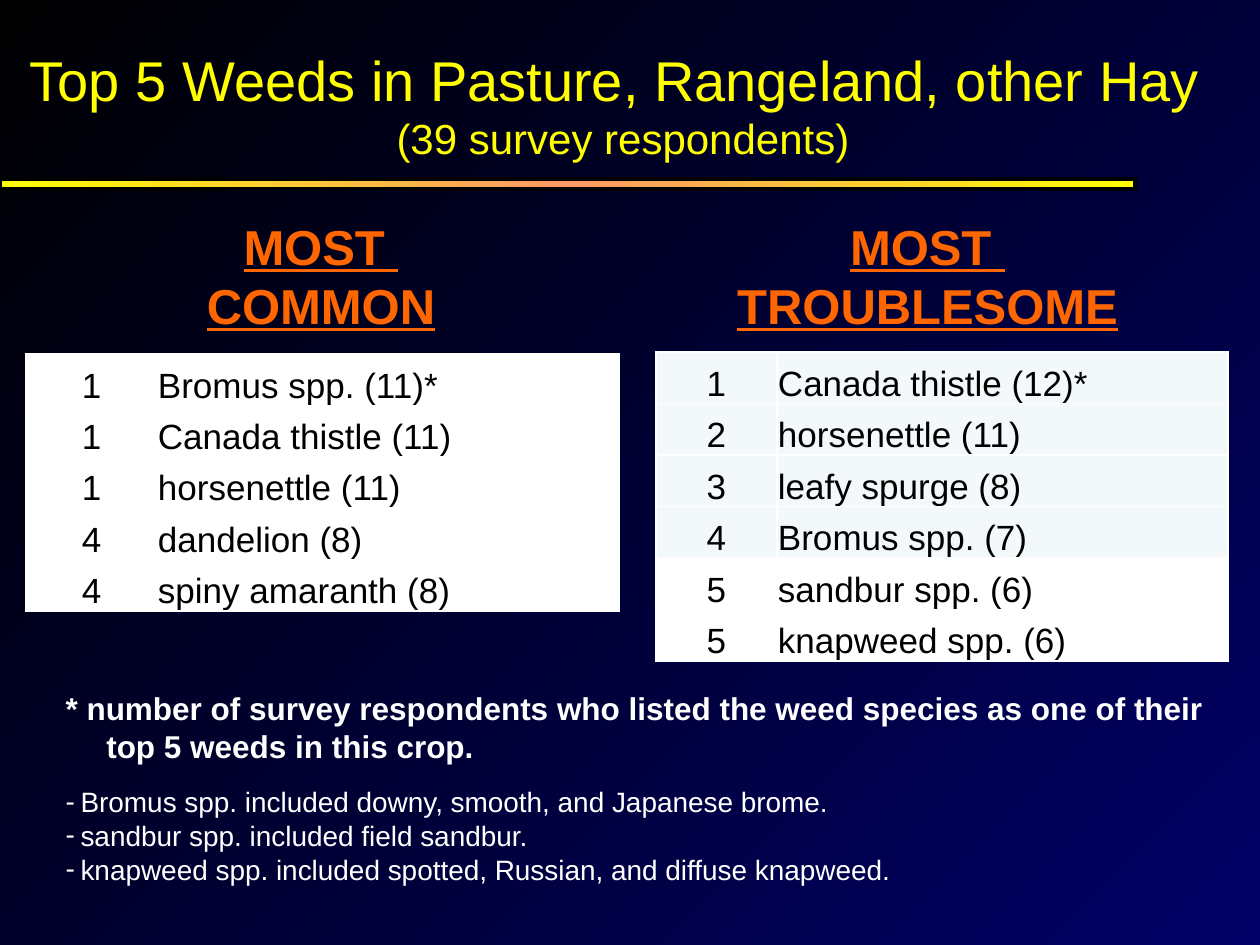
from copy import deepcopy
from pptx import Presentation
from pptx.dml.color import RGBColor
from pptx.enum.shapes import MSO_SHAPE as Shape
from pptx.enum.text import MSO_ANCHOR as Anchor, MSO_AUTO_SIZE as AutoSize, PP_ALIGN as Align
from pptx.oxml.ns import qn
from pptx.oxml.xmlchemy import OxmlElement
from pptx.util import Emu, Pt

SCALE = 914400 / 126
COLORS = {
    "title": "FFFF00", "heading": "FF6600", "glow": "FF9966", "night": "000066",
    "black": "000000", "white": "FFFFFF", "tint": "F3F9FA",
}
TITLE = [("Top 5 Weeds in Pasture, Rangeland, other Hay ", 32), ("(39 survey respondents)", 24)]
HEADINGS = [
    (("MOST ", "COMMON"), (170, 210, 302, 131), True),
    (("MOST ", "TROUBLESOME"), (722, 210, 411, 131), False),
]
COMMON = [
    ("1", "Bromus spp. (11)*"), ("1", "Canada thistle (11)"), ("1", "horsenettle (11)"),
    ("4", "dandelion (8)"), ("4", "spiny amaranth (8)"),
]
TROUBLESOME = [
    ("1", "Canada thistle (12)*"), ("2", "horsenettle (11)"), ("3", "leafy spurge (8)"),
    ("4", "Bromus spp. (7)"), ("5", "sandbur spp. (6)"), ("5", "knapweed spp. (6)"),
]
FOOTNOTE = "* number of survey respondents who listed the weed species as one of their  top 5 weeds in this crop."
SPECIES_NOTES = [
    "Bromus spp. included downy, smooth, and Japanese brome.",
    "sandbur spp. included field sandbur.",
    "knapweed spp. included spotted, Russian, and diffuse knapweed.",
]


def px(length):
    """Turn pixels into EMU."""
    return Emu(round(length * SCALE))


def rgb(name):
    """Look up a named colour."""
    return RGBColor.from_string(COLORS[name])


def apply(target, formats):
    """Set every attribute in a dict of format values."""
    for attribute, value in formats.items():
        setattr(target, attribute, value)


def place(holder, box):
    """Move a placeholder to a pixel box."""
    apply(holder, dict(zip(("left", "top", "width", "height"), map(px, box))))


def write(paragraph, text, size, color, align=Align.LEFT, **font_formats):
    """Fill a paragraph with one formatted run."""
    apply(paragraph, {"alignment": align, "space_before": Pt(0)})
    run = paragraph.add_run()
    run.text = text
    apply(run.font, {"name": "Arial", "size": Pt(size), **font_formats})
    run.font.color.rgb = rgb(color)


def paragraphs(frame, count):
    """Return the given number of paragraphs in an empty text frame."""
    return [frame.paragraphs[0]] + [frame.add_paragraph() for _ in range(count - 1)]


def paint_gradient(fill, owner, names, angle):
    """Spread the named colours evenly over a gradient."""
    fill.gradient()
    fill.gradient_angle = angle
    stop_list = next(owner.iter(qn("a:gsLst")))
    for _ in names[2:]:
        stop_list.append(deepcopy(stop_list[-1]))
    for index, (stop, name) in enumerate(zip(fill.gradient_stops, names)):
        stop.position = index / (len(names) - 1)
        stop.color.rgb = rgb(name)


def add_title(slide):
    """Write the two centred title lines."""
    title = slide.shapes.title
    place(title, (14, 10, 1218, 189))
    frame = title.text_frame
    apply(frame, {"vertical_anchor": Anchor.MIDDLE, "auto_size": AutoSize.NONE, "word_wrap": True})
    for paragraph, (text, size) in zip(paragraphs(frame, len(TITLE)), TITLE):
        write(paragraph, text, size, "title", Align.CENTER)


def add_rule(slide):
    """Draw the glowing bar below the title."""
    rule = slide.shapes.add_shape(Shape.RECTANGLE, *map(px, (0, 179, 1135, 10)))
    rule.shadow.inherit = False
    paint_gradient(rule.fill, rule._element, ("title", "glow", "title"), 0)
    rule.line.color.rgb = rgb("black")
    rule.line.width = Pt(2.25)


def add_heading(slide, lines, box, wraps):
    """Add an underlined column heading."""
    frame = slide.shapes.add_textbox(*map(px, box)).text_frame
    frame.word_wrap = wraps
    for paragraph, text in zip(paragraphs(frame, len(lines)), lines):
        write(paragraph, text, 28, "heading", Align.CENTER, bold=True, underline=True)


def add_borders(cell):
    """Give a cell thin white borders."""
    properties = cell._tc.get_or_add_tcPr()
    for side in ("a:lnL", "a:lnR", "a:lnT", "a:lnB"):
        border = OxmlElement(side)
        border.set("w", str(Pt(1)))
        solid, color = OxmlElement("a:solidFill"), OxmlElement("a:srgbClr")
        color.set("val", COLORS["white"])
        solid.append(color)
        border.append(solid)
        properties.append(border)


def add_ranking(slide, weeds, box, rank_width, tinted_rows=0):
    """Add a table of ranks and weeds."""
    table = slide.shapes.add_table(len(weeds), 2, *map(px, box)).table
    apply(table, {"first_row": False, "horz_banding": False})
    for column, width in zip(table.columns, (rank_width, box[2] - rank_width)):
        column.width = px(width)
    margins = {"margin_left": px(1), "margin_right": px(1), "margin_top": px(1), "margin_bottom": 0}
    for row, weed in enumerate(weeds):
        for column, (text, align) in enumerate(zip(weed, (Align.CENTER, Align.LEFT))):
            cell = table.cell(row, column)
            apply(cell, {"vertical_anchor": Anchor.BOTTOM, **margins})
            add_borders(cell)
            cell.fill.solid()
            cell.fill.fore_color.rgb = rgb("tint" if row < tinted_rows else "white")
            write(cell.text_frame.paragraphs[0], text, 20, "black", align)


def hang(paragraph, indent, bullet=None):
    """Give a paragraph a hanging indent and an optional bullet."""
    properties = paragraph._p.get_or_add_pPr()
    properties.set("marL", str(px(indent)))
    properties.set("indent", str(-px(indent)))
    mark = OxmlElement("a:buChar" if bullet else "a:buNone")
    if bullet:
        mark.set("char", bullet)
    properties.append(mark)


def add_notes(slide):
    """Write the footnote and the species list."""
    body = slide.placeholders[1]
    place(body, (53, 683, 1165, 212))
    frame = body.text_frame
    apply(frame, {"auto_size": AutoSize.NONE, "word_wrap": True, "vertical_anchor": Anchor.TOP})
    footnote, *species = paragraphs(frame, 1 + len(SPECIES_NOTES))
    write(footnote, FOOTNOTE, 18, "white", bold=True)
    footnote.space_after = Pt(11.5)
    hang(footnote, 32)
    for paragraph, text in zip(species, SPECIES_NOTES):
        write(paragraph, text, 16, "white")
        hang(paragraph, 15, "-")


def main():
    """Build and save the weed survey slide."""
    deck = Presentation()
    apply(deck, {"slide_width": px(1260), "slide_height": px(945)})
    slide = deck.slides.add_slide(deck.slide_layouts[1])
    paint_gradient(slide.background.fill, slide._element, ("black", "night"), 315)
    add_title(slide)
    add_rule(slide)
    for lines, box, wraps in HEADINGS:
        add_heading(slide, lines, box, wraps)
    add_ranking(slide, COMMON, (26, 354, 593, 257), 131)
    add_ranking(slide, TROUBLESOME, (656, 352, 572, 309), 121, tinted_rows=4)
    add_notes(slide)
    deck.save("out.pptx")


if __name__ == "__main__":
    main()
